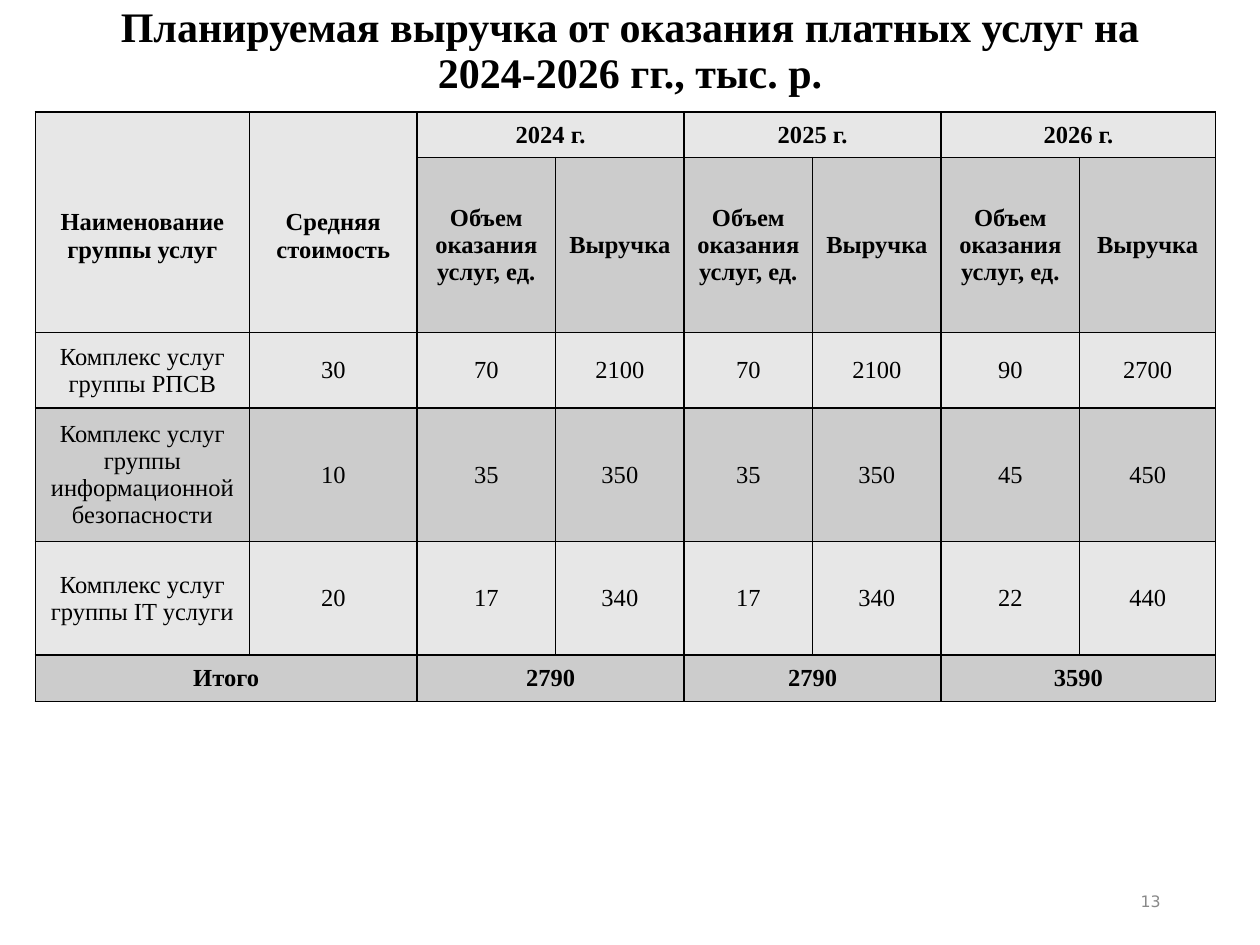
from dataclasses import dataclass

from lxml import etree
from pptx import Presentation
from pptx.dml.color import RGBColor
from pptx.enum.text import MSO_ANCHOR, MSO_AUTO_SIZE, PP_ALIGN
from pptx.oxml.ns import qn
from pptx.util import Inches, Pt

CENTER, RIGHT = PP_ALIGN.CENTER, PP_ALIGN.RIGHT
MIDDLE = MSO_ANCHOR.MIDDLE
NO_AUTOFIT = MSO_AUTO_SIZE.NONE

BLACK = RGBColor(0x00, 0x00, 0x00)
GRAY = RGBColor(0x89, 0x89, 0x89)
LIGHT = RGBColor(0xE7, 0xE7, 0xE7)
DARK = RGBColor(0xCC, 0xCC, 0xCC)
SERIF, SANS = "Times New Roman", "DejaVu Sans"

SLIDE_WIDTH, SLIDE_HEIGHT = 10, 7.5
TITLE = "Планируемая выручка от оказания платных услуг на 2024-2026 гг., тыс. р."
COLUMN_WIDTHS = [1.7, 1.33, 1.1, 1.02, 1.02, 1.02, 1.1, 1.08]
ROW_HEIGHTS = [0.36, 1.39, 0.6, 1.06, 0.9, 0.37]
YEARS = [2024, 2025, 2026]
TOTALS = [2790, 2790, 3590]
TOTAL_ROW = len(ROW_HEIGHTS) - 1


@dataclass(frozen=True)
class Service:
    name: str
    price: int
    volumes: tuple[int, ...]


@dataclass(frozen=True)
class TableCell:
    row: int
    column: int
    text: str
    bold: bool = False
    rows: int = 1
    columns: int = 1
    margin_top: float = 0.05


SERVICES = [
    Service("Комплекс услуг группы РПСВ", 30, (70, 70, 90)),
    Service("Комплекс услуг группы информационной безопасности", 10, (35, 35, 45)),
    Service("Комплекс услуг группы IT услуги", 20, (17, 17, 22)),
]


def place(shape, left: float, top: float, width: float, height: float) -> None:
    shape.left, shape.top = Inches(left * SLIDE_WIDTH), Inches(top * SLIDE_HEIGHT)
    shape.width, shape.height = Inches(width * SLIDE_WIDTH), Inches(height * SLIDE_HEIGHT)


def set_font(font, name: str, size: float, color: RGBColor, bold: bool = False) -> None:
    font.name, font.size, font.bold = name, Pt(size), bold
    font.color.rgb = color


def add_borders(cell) -> None:
    properties = cell._tc.get_or_add_tcPr()
    for index, side in enumerate(("a:lnL", "a:lnR", "a:lnT", "a:lnB")):
        line = etree.Element(qn(side), w=str(Pt(1)))
        fill = etree.SubElement(line, qn("a:solidFill"))
        etree.SubElement(fill, qn("a:srgbClr"), val=str(BLACK))
        properties.insert(index, line)


def draw_cell(table, item: TableCell) -> None:
    cell = table.cell(item.row, item.column)
    if item.rows * item.columns > 1:
        cell.merge(table.cell(item.row + item.rows - 1, item.column + item.columns - 1))
    cell.text = item.text
    cell.vertical_anchor = MIDDLE
    cell.margin_left = cell.margin_right = Inches(0.07)
    cell.margin_top = Inches(item.margin_top)
    paragraph = cell.text_frame.paragraphs[0]
    paragraph.alignment = CENTER
    set_font(paragraph.font, SERIF, 14, BLACK, item.bold)


def table_cells() -> list[TableCell]:
    cells = [
        TableCell(0, column, text, True, rows=2, margin_top=0.27)
        for column, text in enumerate(("Наименование группы услуг", "Средняя стоимость"))
    ]
    cells.append(TableCell(TOTAL_ROW, 0, "Итого", True, columns=2))
    for index, (year, total) in enumerate(zip(YEARS, TOTALS)):
        column = 2 + 2 * index
        cells += [
            TableCell(0, column, f"{year} г.", True, columns=2),
            TableCell(1, column, "Объем оказания услуг, ед.", True),
            TableCell(1, column + 1, "Выручка", True),
            TableCell(TOTAL_ROW, column, str(total), True, columns=2),
        ]
    for row, service in enumerate(SERVICES, start=2):
        values = [service.name, service.price]
        for volume in service.volumes:
            values += [volume, volume * service.price]
        cells += [TableCell(row, column, str(value)) for column, value in enumerate(values)]
    return cells


def draw_title(slide) -> None:
    title = slide.shapes.title
    place(title, 0.069, 0.005, 0.862, 0.1)
    frame = title.text_frame
    frame.auto_size = NO_AUTOFIT
    frame.vertical_anchor = MIDDLE
    frame.margin_top = frame.margin_bottom = 0
    paragraph = frame.paragraphs[0]
    paragraph.text = TITLE
    paragraph.alignment = CENTER
    paragraph.line_spacing = 0.9
    set_font(paragraph.font, SERIF, 24, BLACK, True)


def draw_table(slide) -> None:
    frame = slide.shapes.add_table(
        len(ROW_HEIGHTS), len(COLUMN_WIDTHS), Inches(0.28), Inches(0.89),
        Inches(sum(COLUMN_WIDTHS)), Inches(sum(ROW_HEIGHTS)),
    )
    table = frame.table
    table.first_row = table.horz_banding = False
    for column, width in zip(table.columns, COLUMN_WIDTHS):
        column.width = Inches(width)
    for index, (row, height) in enumerate(zip(table.rows, ROW_HEIGHTS)):
        row.height = Inches(height)
        for cell in row.cells:
            cell.fill.solid()
            cell.fill.fore_color.rgb = DARK if index % 2 else LIGHT
            add_borders(cell)
    for item in table_cells():
        draw_cell(table, item)


def draw_slide_number(slide) -> None:
    box = slide.shapes.add_textbox(0, 0, 0, 0)
    place(box, 0.706, 0.927, 0.225, 0.053)
    frame = box.text_frame
    frame.word_wrap = True
    frame.vertical_anchor = MIDDLE
    paragraph = frame.paragraphs[0]
    paragraph.text = "13"
    paragraph.alignment = RIGHT
    set_font(paragraph.font, SANS, 9, GRAY)


def main() -> None:
    presentation = Presentation()
    presentation.slide_width = Inches(SLIDE_WIDTH)
    presentation.slide_height = Inches(SLIDE_HEIGHT)
    slide = presentation.slides.add_slide(presentation.slide_layouts[5])
    draw_title(slide)
    draw_table(slide)
    draw_slide_number(slide)
    presentation.save("out.pptx")


if __name__ == "__main__":
    main()
